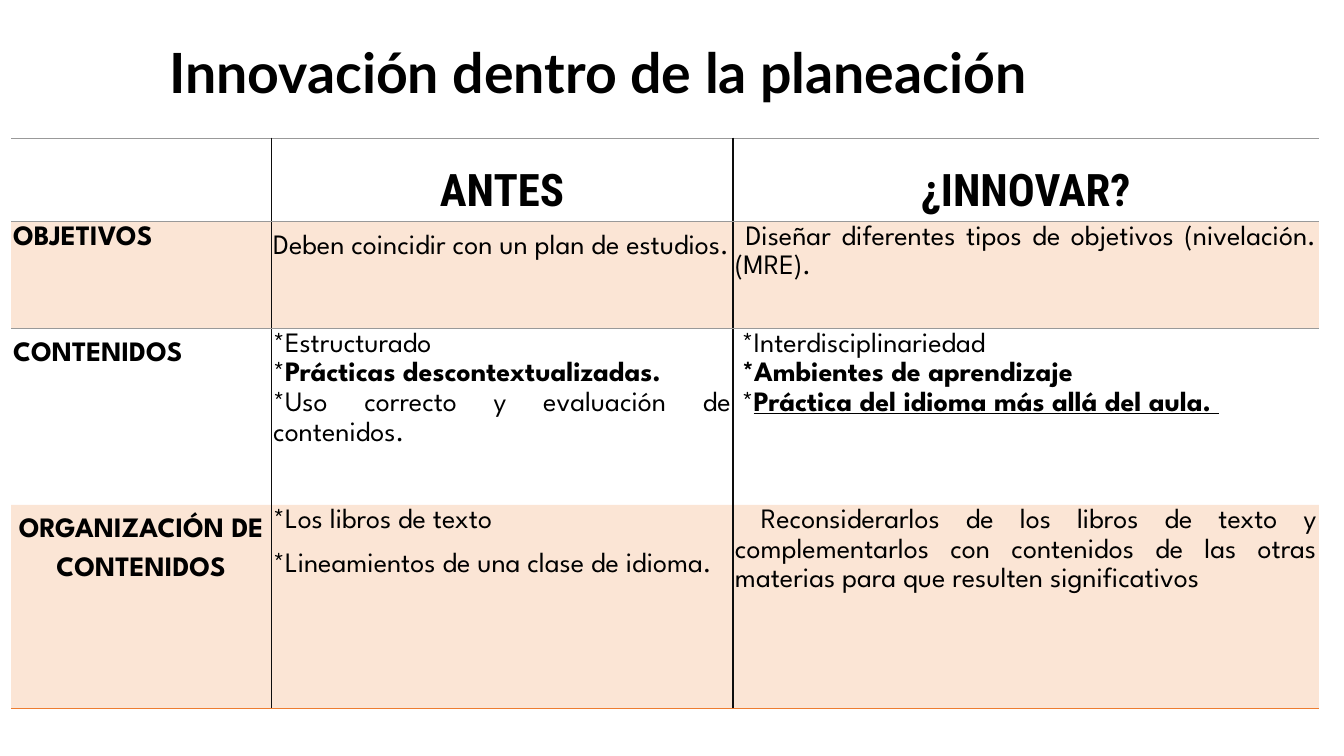
from lxml.etree import SubElement
from pptx import Presentation
from pptx.dml.color import RGBColor
from pptx.enum.text import MSO_ANCHOR, PP_ALIGN
from pptx.oxml import parse_xml
from pptx.oxml.ns import nsdecls, qn
from pptx.util import Inches, Pt

INK, RULE, HEADER_RULE, ORANGE = "000000", "0D0D0D", "999999", "ED7D31"
PLAIN_TABLE_STYLE = "{2D5ABB26-0587-4C30-8999-92F81FD0307C}"
COLUMN_WIDTHS = [2.58, 4.58, 5.81]
ROW_HEIGHTS = [0.83, 1.06, 1.75, 2.02]
BOLD = {"bold": True}
HEADING = {"size": 32, "font": "Roboto Condensed", "bold": True,
           "align": PP_ALIGN.CENTER, "spacing": 1.5, "after": 10}
LABEL = {"bold": True, "spacing": 1.5, "after": 10}
SPACED = {"after": 10}

# Each cell is (paragraphs, format); a paragraph is a list of (text, run format).
ROWS = [
    [([], {}),
     ([[("ANTES", {})]], HEADING),
     ([[("¿INNOVAR?", {})]], HEADING)],
    [([[("OBJETIVOS", {})]], {"bold": True, "after": 10}),
     ([[("Deben coincidir con un plan de estudios.", {})]],
      {"spacing": 1.5, "after": 10}),
     ([[(" Diseñar diferentes tipos de objetivos (nivelación. (MRE).", {})]],
      SPACED)],
    [([[("CONTENIDOS", {})]], LABEL),
     ([[("*Estructurado", {})],
       [("*", {}), ("Prácticas descontextualizadas.", BOLD)],
       [("*Uso correcto y evaluación de contenidos.", {})]], {}),
     ([[(" *Interdisciplinariedad", {})],
       [(" *Ambientes de aprendizaje", BOLD)],
       [(" *", {}), ("Práctica del idioma más allá del aula. ",
                     {"bold": True, "underline": True})]], {})],
    [([[("ORGANIZACIÓN DE CONTENIDOS", {})]],
      {**LABEL, "align": PP_ALIGN.CENTER}),
     ([[("*Los libros de texto", {})],
       [("*Lineamientos de una clase de idioma.", {})]], SPACED),
     ([[(" Reconsiderarlos de los libros de texto y complementarlos con "
         "contenidos de las otras materias para que resulten significativos",
         {})]], SPACED)],
]


def rgb(value):
    return RGBColor.from_string(value)


def write_text(frame, paragraphs, size=20, font="League Spartan", bold=False,
               align=PP_ALIGN.JUSTIFY, spacing=1.15, after=0):
    frame.word_wrap = True
    for index, runs in enumerate(paragraphs):
        paragraph = frame.paragraphs[0] if index == 0 else frame.add_paragraph()
        paragraph.alignment = align
        paragraph.line_spacing = spacing
        paragraph.space_before = Pt(0)
        paragraph.space_after = Pt(after)
        for text, style in runs:
            run = paragraph.add_run()
            run.text = text
            run.font.name = font
            run.font.size = Pt(size)
            run.font.bold = style.get("bold", bold)
            run.font.underline = style.get("underline", False)
            run.font.color.rgb = rgb(INK)


def tint_cell(cell, color, percent):
    cell.fill.solid()
    cell.fill.fore_color.rgb = rgb(color)
    solid = cell._tc.tcPr.find(qn("a:solidFill"))
    SubElement(solid[0], qn("a:alpha"), val=str(percent * 1000))


def set_borders(cell, borders):
    """Draw 1 pt rules on the sides given as {"L"|"R"|"T"|"B": colour}."""
    sides = [side for side in "LRTB" if side in borders]
    for position, side in enumerate(sides):
        cell._tc.tcPr.insert(position, parse_xml(
            f'<a:ln{side} {nsdecls("a")} w="12700"><a:solidFill>'
            f'<a:srgbClr val="{borders[side]}"/></a:solidFill></a:ln{side}>'))


def cell_borders(row, column):
    borders = {}
    if column > 0:
        borders["L"] = RULE
    if column < len(COLUMN_WIDTHS) - 1:
        borders["R"] = RULE
    if row == 0:
        borders.update(T=HEADER_RULE, B=HEADER_RULE)
    elif row == 1:
        borders["T"] = HEADER_RULE
    elif row == len(ROW_HEIGHTS) - 1:
        borders["B"] = ORANGE
    return borders


def add_title(slide, text):
    title = slide.shapes.add_textbox(
        Inches(1.58), Inches(0.4), Inches(11.5), Inches(0.7))
    title.text_frame.vertical_anchor = MSO_ANCHOR.MIDDLE
    write_text(title.text_frame, [[(text, {})]], size=39.6, font="Lato",
               bold=True, align=PP_ALIGN.LEFT, spacing=0.9)


def add_comparison(slide):
    table = slide.shapes.add_table(
        len(ROW_HEIGHTS), len(COLUMN_WIDTHS), Inches(0.11), Inches(1.37),
        Inches(sum(COLUMN_WIDTHS)), Inches(sum(ROW_HEIGHTS))).table
    table._tbl.tblPr.find(qn("a:tableStyleId")).text = PLAIN_TABLE_STYLE
    table.horz_banding = False
    for column, width in zip(table.columns, COLUMN_WIDTHS):
        column.width = Inches(width)
    for row, height in zip(table.rows, ROW_HEIGHTS):
        row.height = Inches(height)
    for r, contents in enumerate(ROWS):
        for c, (paragraphs, style) in enumerate(contents):
            cell = table.cell(r, c)
            cell.margin_left = cell.margin_right = Inches(0.02)
            cell.margin_top = cell.margin_bottom = Inches(0)
            write_text(cell.text_frame, paragraphs, **style)
            if r % 2:
                tint_cell(cell, ORANGE, 20)
            else:
                cell.fill.background()
            set_borders(cell, cell_borders(r, c))


def main():
    presentation = Presentation()
    presentation.slide_width = Inches(13.33)
    presentation.slide_height = Inches(7.5)
    slide = presentation.slides.add_slide(presentation.slide_layouts[6])
    add_title(slide, "Innovación dentro de la planeación")
    add_comparison(slide)
    presentation.save("out.pptx")


if __name__ == "__main__":
    main()
